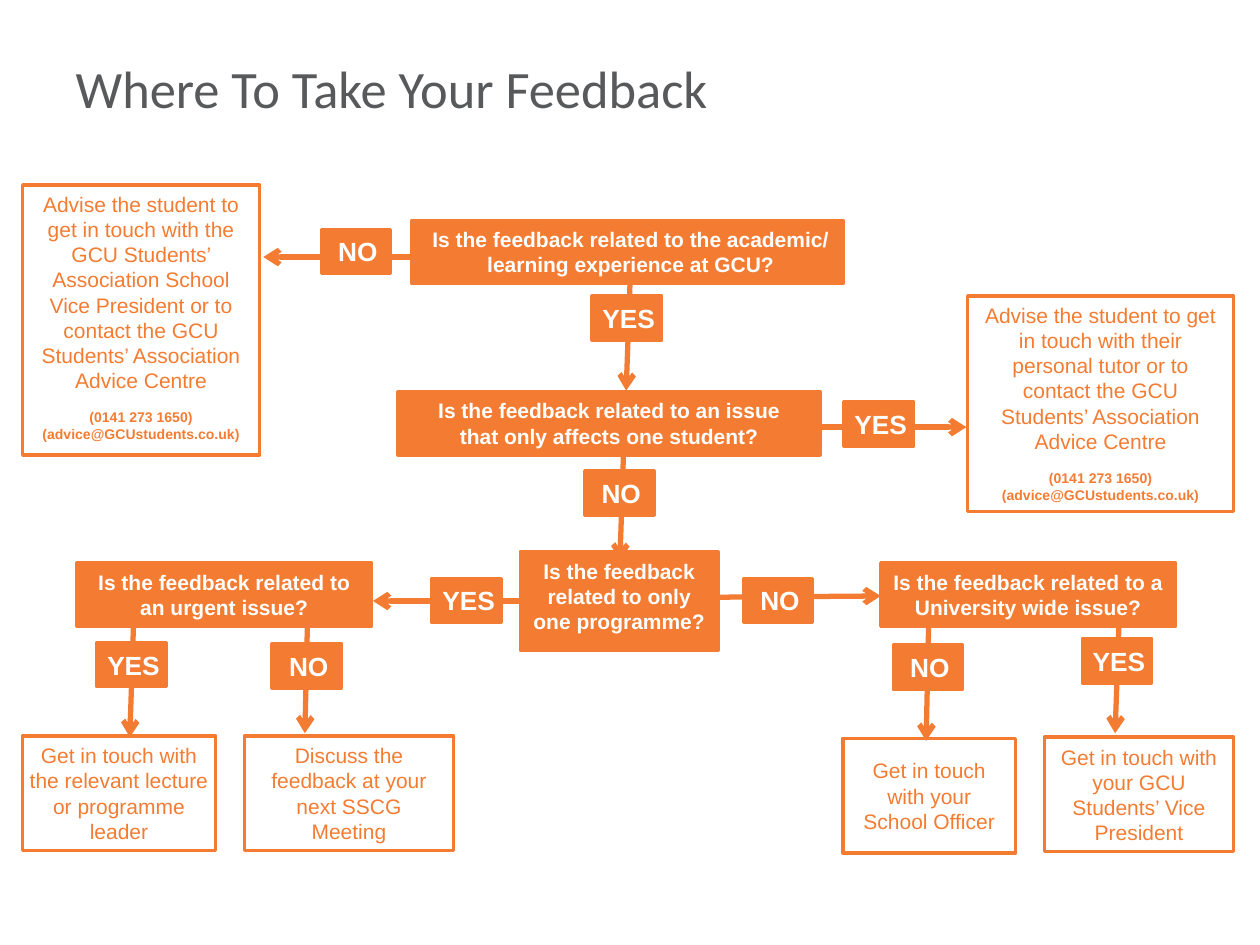
from lxml.etree import SubElement
from pptx import Presentation
from pptx.dml.color import RGBColor
from pptx.enum.shapes import MSO_CONNECTOR, MSO_SHAPE
from pptx.enum.text import MSO_ANCHOR, PP_ALIGN
from pptx.oxml.ns import qn
from pptx.util import Inches, Pt

COLORS = {"orange": "F47C32", "white": "FFFFFF", "title": "58595B"}

TITLE_FONT = {"name": "Calibri", "size": Pt(30), "bold": False}
QUESTION_FONT = {"name": "Arial", "size": Pt(12), "bold": True}
OUTCOME_FONT = {"name": "Arial", "size": Pt(12), "bold": False}
CONTACT_FONT = {"name": "Arial", "size": Pt(8), "bold": True}
LABEL_FONT = {"name": "Arial", "size": Pt(15), "bold": True}

CONTACT = ["(0141 273 1650)", "(advice@GCUstudents.co.uk)"]
LABEL_SIZE = (0.55, 0.35)

QUESTIONS = [
    ((3.27, 1.75, 3.42, 0.5), 0.15,
     ["Is the feedback related to the academic/ learning experience at GCU?"]),
    ((3.16, 3.11, 3.35, 0.5), 0.1,
     ["Is the feedback related to an issue", "that only affects one student?"]),
    ((4.13, 4.38, 1.57, 0.78), 0.1,
     ["Is the feedback related to only one programme?"]),
    ((0.61, 4.47, 2.34, 0.5), 0.1,
     ["Is the feedback related to an urgent issue?"]),
    ((6.99, 4.47, 2.34, 0.5), 0.1,
     ["Is the feedback related to a University wide issue?"]),
]

OUTCOMES = [
    ((0.18, 5.84, 1.53, 0.91), 0.03,
     "Get in touch with the relevant lecture or programme leader"),
    ((1.94, 5.84, 1.66, 0.91), 0.1,
     "Discuss the feedback at your next SSCG Meeting"),
    ((6.69, 5.86, 1.37, 0.91), 0.1,
     "Get in touch with your School Officer"),
    ((8.29, 5.85, 1.5, 0.91), 0.1,
     "Get in touch with your GCU Students’ Vice President"),
]

ADVICE = [
    ((0.18, 1.47, 1.88, 2.14),
     "Advise the student to get in touch with the GCU Students’ Association "
     "School Vice President or to contact the GCU Students’ Association "
     "Advice Centre"),
    ((7.68, 2.35, 2.11, 1.71),
     "Advise the student to get in touch with their personal tutor or to "
     "contact the GCU Students’ Association Advice Centre"),
]

BRANCHES = [
    ("NO", (3.27, 2.04, 2.09, 2.04), (2.55, 1.82)),
    ("YES", (5, 2.25, 4.97, 3.1), (4.7, 2.35)),
    ("YES", (6.51, 3.39, 7.67, 3.39), (6.7, 3.19)),
    ("NO", (4.95, 3.55, 4.92, 4.45), (4.64, 3.74)),
    ("YES", (4.13, 4.77, 2.96, 4.77), (3.43, 4.59)),
    ("NO", (5.7, 4.74, 6.99, 4.73), (5.9, 4.59)),
    ("YES", (1.06, 4.95, 1.03, 5.85), (0.77, 5.1)),
    ("NO", (2.44, 4.96, 2.42, 5.82), (2.16, 5.11)),
    ("NO", (7.37, 4.98, 7.35, 5.88), (7.09, 5.12)),
    ("YES", (8.88, 4.98, 8.85, 5.82), (8.59, 5.07)),
]


def color(name):
    return RGBColor.from_string(COLORS[name])


def set_all(target, values):
    for name, value in values.items():
        setattr(target, name, value)


def write(p, text, font, color_name):
    r = p.add_run()
    r.text = text
    set_all(r.font, font)
    r.font.color.rgb = color(color_name)


def add_title(s, text):
    sp = s.shapes.title
    set_all(sp, {"left": Inches(0.5), "top": Inches(0.42),
                 "width": Inches(6.7), "height": Inches(0.55)})
    tf = sp.text_frame
    set_all(tf, {"vertical_anchor": MSO_ANCHOR.MIDDLE, "word_wrap": True})
    p = tf.paragraphs[0]
    p.alignment = PP_ALIGN.LEFT
    write(p, text, TITLE_FONT, "title")


def add_box(s, at, lines, font, filled=True, inset=0.1, right=0.1,
            anchor=MSO_ANCHOR.TOP):
    sp = s.shapes.add_shape(MSO_SHAPE.RECTANGLE, *map(Inches, at))
    sp.shadow.inherit = False
    if filled:
        sp.fill.solid()
        sp.fill.fore_color.rgb = color("orange")
    else:
        sp.fill.background()
    sp.line.color.rgb = color("orange")
    sp.line.width = Pt(2)
    tf = sp.text_frame
    set_all(tf, {"word_wrap": True, "vertical_anchor": anchor,
                 "margin_left": Inches(inset), "margin_right": Inches(right),
                 "margin_top": Inches(0.05), "margin_bottom": Inches(0.05)})
    for i, line in enumerate(lines):
        p = tf.add_paragraph() if i else tf.paragraphs[0]
        p.alignment = PP_ALIGN.CENTER
        write(p, line, font, "white" if filled else "orange")
    return tf


def add_advice(s, at, text):
    tf = add_box(s, at, [text], OUTCOME_FONT, filled=False)
    for i, line in enumerate(CONTACT):
        p = tf.add_paragraph()
        p.alignment = PP_ALIGN.CENTER
        p.space_before = Pt(0 if i else 9)
        write(p, line, CONTACT_FONT, "orange")


def add_arrow(s, ends):
    line = s.shapes.add_connector(MSO_CONNECTOR.STRAIGHT, *map(Inches, ends))
    line.line.color.rgb = color("orange")
    line.line.width = Pt(3)
    SubElement(line.line._get_or_add_ln(), qn("a:tailEnd"), type="arrow")
    SubElement(line._element.spPr, qn("a:effectLst"))


def main():
    prs = Presentation()
    prs.slide_width, prs.slide_height = Inches(10), Inches(7.5)
    s = prs.slides.add_slide(prs.slide_layouts[5])
    add_title(s, "Where To Take Your Feedback")
    for _, ends, _ in BRANCHES:
        add_arrow(s, ends)
    for at, inset, lines in QUESTIONS:
        add_box(s, at, lines, QUESTION_FONT, inset=inset)
    for at, inset, text in OUTCOMES:
        add_box(s, at, [text], OUTCOME_FONT, filled=False, inset=inset,
                right=inset, anchor=MSO_ANCHOR.MIDDLE)
    for at, text in ADVICE:
        add_advice(s, at, text)
    for answer, _, corner in BRANCHES:
        add_box(s, corner + LABEL_SIZE, [answer], LABEL_FONT, inset=0.03,
                right=0, anchor=MSO_ANCHOR.MIDDLE)
    prs.save("out.pptx")


if __name__ == "__main__":
    main()
